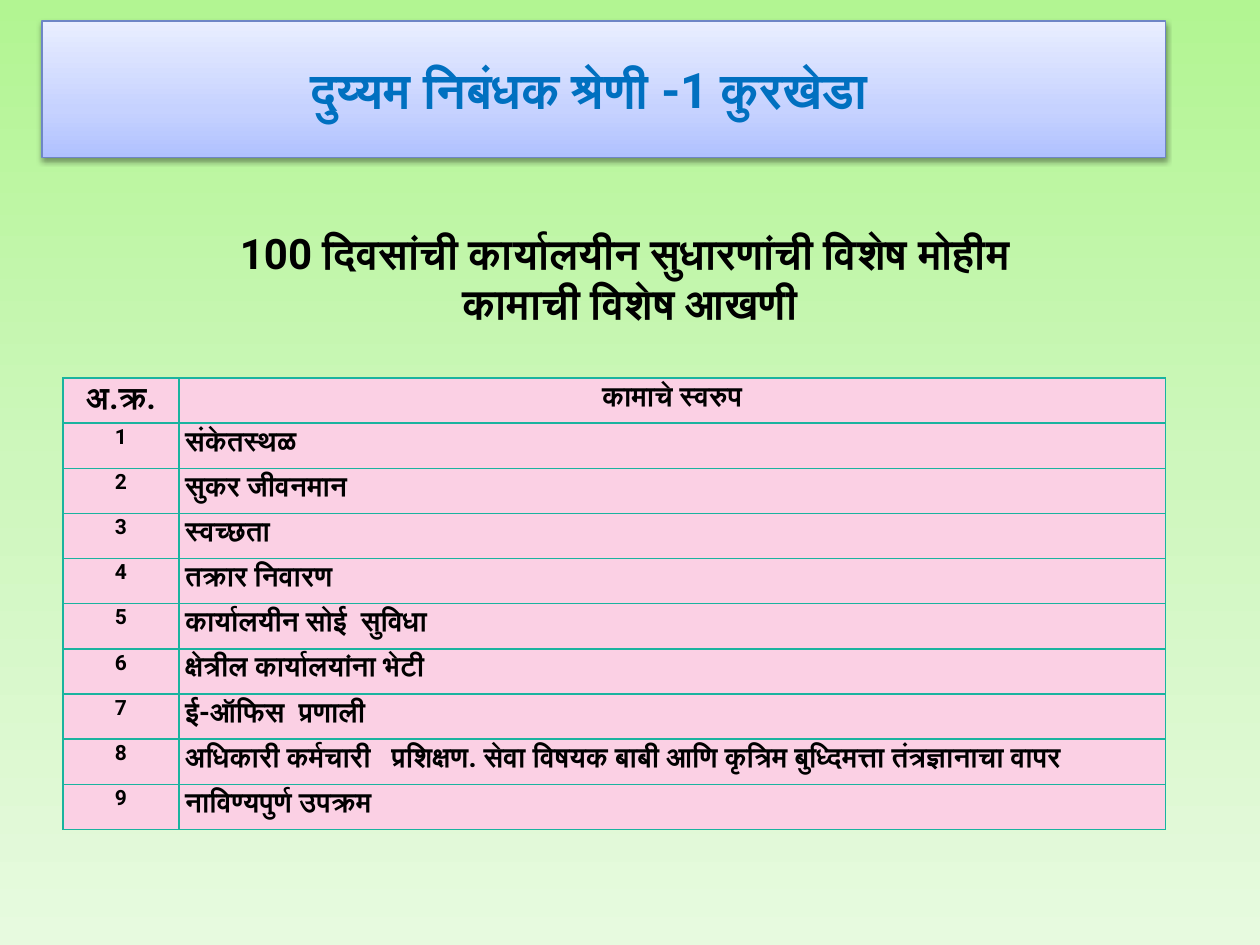
"""Build the slide listing the nine work areas of the 100-day office improvement drive."""
import copy

import lxml.etree
import pptx
import pptx.dml.color
import pptx.enum.text
import pptx.oxml
import pptx.oxml.ns
import pptx.util

Pt = pptx.util.Pt
RGB = pptx.dml.color.RGBColor.from_string
qn = pptx.oxml.ns.qn
nsdecls = pptx.oxml.ns.nsdecls
CENTER = pptx.enum.text.PP_ALIGN.CENTER
LEFT = pptx.enum.text.PP_ALIGN.LEFT
MIDDLE = pptx.enum.text.MSO_ANCHOR.MIDDLE

THEME = {
    "font": "Roboto",
    "text": "000000",
    "title": "0070C0",
    "banner_line": "6E86C6",
    "cell": "FBD0E4",
    "border": "1AB39F",
    "background": [(0, "B2F592"), (0.5, "CEF7BD"), (1, "E7FADF")],
    "banner": [(0, "B0C1FF"), (0.35, "C6D2FF"), (1, "E9EEFF")],
    "size": {"title": 28, "heading": 24, "corner": 18, "body": 16, "number": 12},
}


def fill_gradient(fill, element, stops, angle):
    fill.gradient()
    fill.gradient_angle = angle
    stop_list = element.find(".//" + qn("a:gsLst"))
    stop_list.append(copy.deepcopy(stop_list[-1]))
    for stop, (position, color) in zip(fill.gradient_stops, stops):
        stop.position = position
        stop.color.rgb = RGB(color)


def add_run(p, text, size, color="text", align=CENTER):
    p.alignment = align
    r = p.add_run()
    r.text = text
    r.font.name = THEME["font"]
    r.font.size = Pt(THEME["size"][size])
    r.font.bold = True
    r.font.color.rgb = RGB(THEME[color])
    cs = lxml.etree.SubElement(r.font._element, qn("a:cs"))
    cs.set("typeface", THEME["font"])


prs = pptx.Presentation()
prs.slide_width, prs.slide_height = Pt(720), Pt(540)
s = prs.slides.add_slide(prs.slide_layouts[6])
fill_gradient(s.background.fill, s.element, THEME["background"], 270)

banner = s.shapes.add_shape(1, Pt(24), Pt(12), Pt(642), Pt(78))
fill_gradient(banner.fill, banner.element, THEME["banner"], 90)
banner.line.color.rgb = RGB(THEME["banner_line"])
banner.line.width = Pt(0.75)
banner.shadow.inherit = False
effects = banner.element.spPr.find(qn("a:effectLst"))
effects.append(pptx.oxml.parse_xml(
    f'<a:outerShdw {nsdecls("a")} blurRad="{Pt(3.1)}" dist="{Pt(1.6)}" dir="5400000" rotWithShape="0">'
    '<a:srgbClr val="000000"><a:alpha val="38000"/></a:srgbClr></a:outerShdw>'))
tf = banner.text_frame
tf.word_wrap = True
tf.vertical_anchor = MIDDLE
tf.margin_right = Pt(24)
add_run(tf.paragraphs[0], "दुय्यम निबंधक श्रेणी -1 कुरखेडा", "title", "title")

heading = s.shapes.add_textbox(0, Pt(126), Pt(720), Pt(65.5))
tf = heading.text_frame
tf.word_wrap = True
tf.vertical_anchor = MIDDLE
add_run(tf.paragraphs[0], "100 दिवसांची कार्यालयीन सुधारणांची विशेष मोहीम ", "heading")
add_run(tf.add_paragraph(), "कामाची विशेष आखणी", "heading")

works = [
    "संकेतस्थळ",
    "सुकर जीवनमान",
    "स्वच्छता",
    "तक्रार निवारण",
    "कार्यालयीन सोई  सुविधा",
    "क्षेत्रील कार्यालयांना भेटी",
    "ई-ऑफिस  प्रणाली",
    "अधिकारी कर्मचारी   प्रशिक्षण. सेवा विषयक बाबी आणि कृत्रिम बुध्दिमत्ता तंत्रज्ञानाचा वापर",
    "नाविण्यपुर्ण उपक्रम",
]
rows = [[("अ.क्र.", "corner", CENTER), ("कामाचे स्वरुप", "body", CENTER)]]
for number, work in enumerate(works, 1):
    rows.append([(str(number), "number", CENTER), (work, "body", LEFT)])

row_height = 25.8
table = s.shapes.add_table(len(rows), 2, Pt(36), Pt(216), Pt(630), Pt(row_height * len(rows))).table
table.columns[0].width, table.columns[1].width = Pt(66.2), Pt(563.8)
for row, values in zip(table.rows, rows):
    row.height = Pt(row_height)
    for cell, (text, size, align) in zip(row.cells, values):
        cell.margin_left = cell.margin_right = Pt(3.6)
        cell.margin_top = cell.margin_bottom = 0
        p = cell.text_frame.paragraphs[0]
        p.line_spacing = 1.07
        add_run(p, text, size, align=align)
        cell.fill.solid()
        cell.fill.fore_color.rgb = RGB(THEME["cell"])
        tcPr = cell._tc.get_or_add_tcPr()
        for i, side in enumerate(("lnL", "lnR", "lnT", "lnB")):
            tcPr.insert(i, pptx.oxml.parse_xml(
                f'<a:{side} {nsdecls("a")} w="{Pt(1)}"><a:solidFill>'
                f'<a:srgbClr val="{THEME["border"]}"/></a:solidFill></a:{side}>'))

prs.save("out.pptx")
